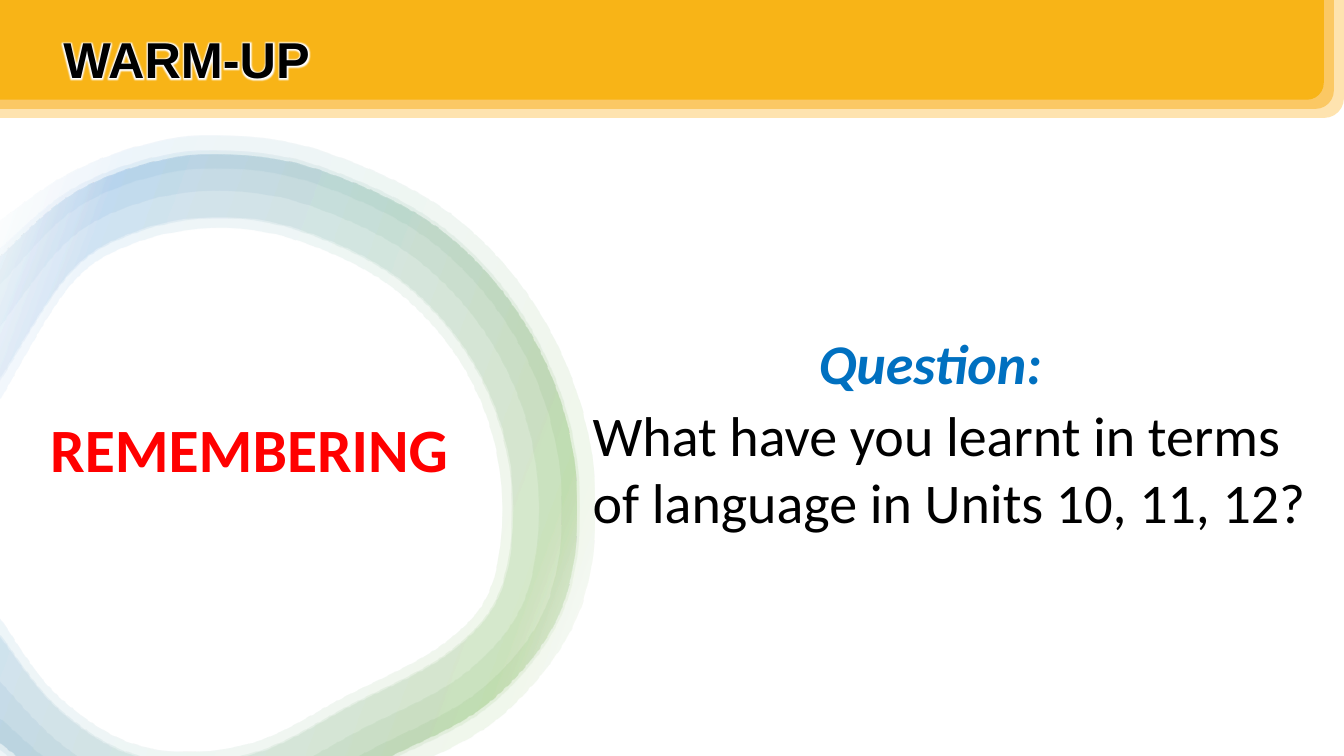
"""Builds the warm-up slide: a layered header, a translucent ring and a question."""
from lxml import etree
from pptx import Presentation
from pptx import util as u
from pptx.dml.color import RGBColor
from pptx.enum import shapes, text
from pptx.oxml.ns import qn

COLORS = {"pale": "FEE3AF", "light": "FBC864", "amber": "F8B417", "white": "FFFFFF",
          "green": "70AD47", "blue": "5B9BD5", "black": "000000",
          "question": "0070C0", "red": "FF0000"}
GRADIENT = [(2, "white"), (16, "green"), (85, "blue"), (100, "white")]
STEPS = 6

OUTER = [(0, 2.54), (0.65, 1.96), (1.37, 1.64), (2.13, 1.53), (3.12, 1.67),
         (4.35, 2.27), (5.23, 3.27), (5.68, 4.55), (5.59, 5.94), (4.88, 6.93),
         (3.78, 7.54), (2.62, 8.09), (1.32, 8.13), (0.66, 7.86), (0, 7.37)]
INNER = [(0, 3.96), (0.68, 2.84), (1.3, 2.42), (2.1, 2.26), (2.93, 2.38),
         (3.88, 2.85), (4.59, 3.65), (4.94, 4.65), (4.88, 5.75), (4.4, 6.37),
         (3.42, 6.9), (2.44, 7.38), (1.4, 7.4), (0.57, 6.9), (0, 6.13)]
BANDS = [(-0.05, 0.5), (0, 0.85), (0, 1), (0, 0.87), (-0.25, 0.2)]


def edge(share):
    """Return a smooth curve lying at a share of the way from OUTER to INNER."""
    points = [[a + (b - a) * share for a, b in zip(out, inn)]
              for out, inn in zip(OUTER, INNER)]
    ends = [points[0], *points, points[-1]]
    curve = []
    for a, b, c, d in zip(ends, ends[1:], ends[2:], ends[3:]):
        for t in (n / STEPS for n in range(STEPS)):
            curve.append([u.Inches(max(0, (
                2 * q + (r - o) * t + (2 * o - 5 * q + 4 * r - s) * t ** 2
                + (3 * q - o - 3 * r + s) * t ** 3) / 2))
                for o, q, r, s in zip(a, b, c, d)])
    return curve + [[u.Inches(v) for v in points[-1]]]


def add_color(parent, name, **effects):
    """Append a colour element with optional effects such as alpha."""
    clr = etree.SubElement(parent, qn("a:srgbClr"), val=COLORS[name])
    for effect, value in effects.items():
        etree.SubElement(clr, qn(f"a:{effect}"), val=str(value))


prs = Presentation()
prs.slide_width, prs.slide_height = u.Inches(13.33), u.Inches(7.5)
s = prs.slides.add_slide(prs.slide_layouts[6])

for i, name in enumerate(["pale", "light", "amber"]):
    sp = s.shapes.add_shape(
        shapes.MSO_SHAPE.ROUND_1_RECTANGLE, 0, u.Inches(-0.01),
        u.Inches(13.33 - 0.1 * i), u.Inches(1.18 - 0.09 * i))
    sp.shadow.inherit = False
    sp.fill.solid()
    sp.fill.fore_color.rgb = RGBColor.from_string(COLORS[name])
    sp.line.fill.background()
    sp._element.spPr.xfrm.set("flipV", "1")

for outer_share, inner_share in BANDS:
    outline = edge(outer_share) + edge(inner_share)[::-1]
    builder = s.shapes.build_freeform(*outline[0])
    builder.add_line_segments(outline[1:], close=True)
    sp = builder.convert_to_shape()
    sp.shadow.inherit = False
    sp.line.fill.background()
    sp.fill.gradient()
    sp.fill.gradient_angle = 160
    stops = sp._element.spPr.find(".//" + qn("a:gsLst"))
    for stop in list(stops):
        stops.remove(stop)
    for pos, name in GRADIENT:
        stop = etree.SubElement(stops, qn("a:gs"), pos=str(pos * 1000))
        add_color(stop, name, alpha=10000)

LABELS = [
    ("WARM-UP", (0.53, 0.23, 4.52, 0.71), "black",
     {"name": "Arial", "size": u.Pt(36), "bold": True}),
    ("What have you learnt in terms of language in Units 10, 11, 12?",
     (5.78, 3.92, 7.36, 1.45), "black", {"name": "Calibri", "size": u.Pt(40)}),
    ("Question:", (8.02, 3.21, 5.2, 0.77), "question",
     {"name": "Calibri", "size": u.Pt(40), "bold": True, "italic": True}),
    ("REMEMBERING", (0.4, 4.03, 4.33, 0.84), "red",
     {"name": "Calibri", "size": u.Pt(44), "bold": True}),
]
for words, box, color, fmt in LABELS:
    tf = s.shapes.add_textbox(*map(u.Inches, box)).text_frame
    tf.word_wrap = True
    tf.auto_size = text.MSO_AUTO_SIZE.SHAPE_TO_FIT_TEXT
    r = tf.paragraphs[0].add_run()
    r.text = words
    for key, value in fmt.items():
        setattr(r.font, key, value)
    r.font.color.rgb = RGBColor.from_string(COLORS[color])
    if words == "WARM-UP":
        effects = etree.Element(qn("a:effectLst"))
        add_color(etree.SubElement(effects, qn("a:glow"), rad="63500"), "white")
        r._r.rPr.find(qn("a:solidFill")).addnext(effects)

prs.save("out.pptx")
